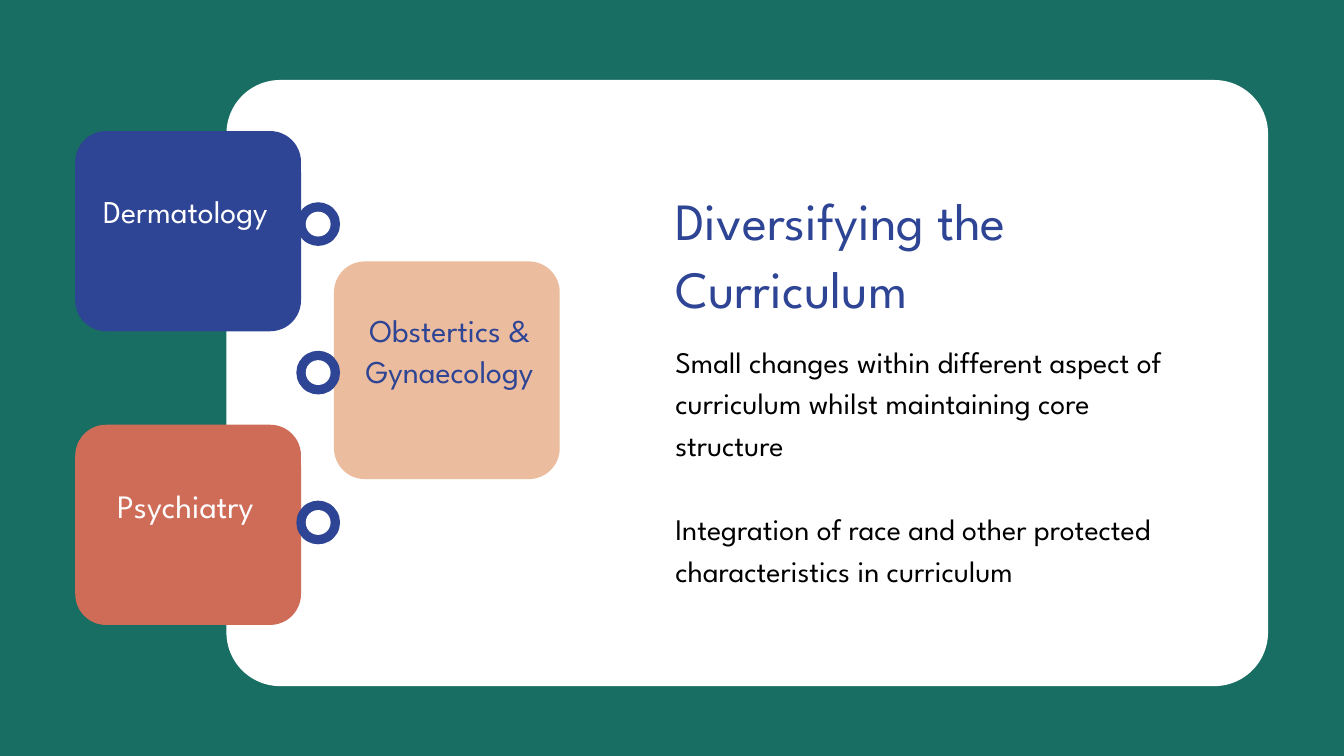
from dataclasses import dataclass

import pptx
import pptx.dml.color
import pptx.enum.shapes
import pptx.enum.text
import pptx.util

RGBColor = pptx.dml.color.RGBColor
MSO_SHAPE = pptx.enum.shapes.MSO_SHAPE
PP_ALIGN = pptx.enum.text.PP_ALIGN

PX = pptx.util.Inches(1) // 100  # 100 px to the inch

GREEN = RGBColor(0x19, 0x6E, 0x63)
BLUE = RGBColor(0x2E, 0x44, 0x94)
PEACH = RGBColor(0xEC, 0xBC, 0x9E)
CORAL = RGBColor(0xCF, 0x6C, 0x58)
WHITE = RGBColor(0xFF, 0xFF, 0xFF)
BLACK = RGBColor(0x00, 0x00, 0x00)

FONT = "League Spartan"
RING_X, RING_SIZE, HOLE_SIZE = 473, 65, 37


@dataclass(frozen=True)
class Box:
    x: int
    y: int
    w: int
    h: int


@dataclass(frozen=True)
class Card:
    box: Box
    radius: int
    color: RGBColor


@dataclass(frozen=True)
class Label:
    box: Box
    paragraphs: tuple[str, ...]
    size: int
    leading: float
    color: RGBColor
    align: PP_ALIGN = PP_ALIGN.LEFT


CARDS = [
    Card(Box(337, 119, 1550, 902), 80, WHITE),
    Card(Box(497, 389, 336, 324), 46, PEACH),
    Card(Box(112, 632, 336, 298), 46, CORAL),
    Card(Box(112, 195, 336, 298), 46, BLUE),
]

RING_CENTERS = [333, 554, 777]

LABELS = [
    Label(Box(505, 458, 328, 120), ("Obstertics & Gynaecology",),
          34, 44.2, BLUE, PP_ALIGN.CENTER),
    Label(Box(112, 718, 328, 61), ("Psychiatry",),
          35, 45.5, WHITE, PP_ALIGN.CENTER),
    Label(Box(112, 280, 328, 60), ("Dermatology",),
          34, 44.2, WHITE, PP_ALIGN.CENTER),
    Label(Box(1005, 272, 766, 205), ("Diversifying the Curriculum",),
          56, 72.8, BLUE),
    Label(Box(1005, 502, 766, 360),
          ("Small changes within different aspect of curriculum whilst "
           "maintaining core structure",
           "Integration of race and other protected characteristics in "
           "curriculum"),
          32, 44.8, BLACK),
]


def emu(box: Box) -> tuple[int, int, int, int]:
    return box.x * PX, box.y * PX, box.w * PX, box.h * PX


def add_filled(s, kind: MSO_SHAPE, box: Box, color: RGBColor):
    sp = s.shapes.add_shape(kind, *emu(box))
    sp.shadow.inherit = False
    sp.fill.solid()
    sp.fill.fore_color.rgb = color
    sp.line.fill.background()
    return sp


def add_card(s, card: Card) -> None:
    sp = add_filled(s, MSO_SHAPE.ROUNDED_RECTANGLE, card.box, card.color)
    sp.adjustments[0] = card.radius / min(card.box.w, card.box.h)


def add_ring(s, center_y: int) -> None:
    for size, color in ((RING_SIZE, BLUE), (HOLE_SIZE, WHITE)):
        box = Box(RING_X - size // 2, center_y - size // 2, size, size)
        add_filled(s, MSO_SHAPE.OVAL, box, color)


def add_label(s, label: Label) -> None:
    tf = s.shapes.add_textbox(*emu(label.box)).text_frame
    frame_format = {
        "word_wrap": True,
        "auto_size": pptx.enum.text.MSO_AUTO_SIZE.SHAPE_TO_FIT_TEXT,
        "margin_left": 0, "margin_right": 0,
        "margin_top": 0, "margin_bottom": 0,
    }
    for name, value in frame_format.items():
        setattr(tf, name, value)

    leading = pptx.util.Pt(label.leading)
    font_format = {"name": FONT, "size": pptx.util.Pt(label.size)}
    for i, text in enumerate(label.paragraphs):
        p = tf.add_paragraph() if i else tf.paragraphs[0]
        p.alignment = label.align
        p.line_spacing = leading
        p.space_before = leading if i else 0  # one line between paragraphs
        r = p.add_run()
        r.text = text
        for name, value in font_format.items():
            setattr(r.font, name, value)
        r.font.color.rgb = label.color


def main() -> None:
    prs = pptx.Presentation()
    prs.slide_width, prs.slide_height = 2000 * PX, 1125 * PX
    s = prs.slides.add_slide(prs.slide_layouts[6])

    # Background
    s.background.fill.solid()
    s.background.fill.fore_color.rgb = GREEN

    # White panel and the subject cards
    for card in CARDS:
        add_card(s, card)

    # Rings between the cards
    for center_y in RING_CENTERS:
        add_ring(s, center_y)

    # Card names, title and body text
    for label in LABELS:
        add_label(s, label)

    prs.save("out.pptx")


if __name__ == "__main__":
    main()
